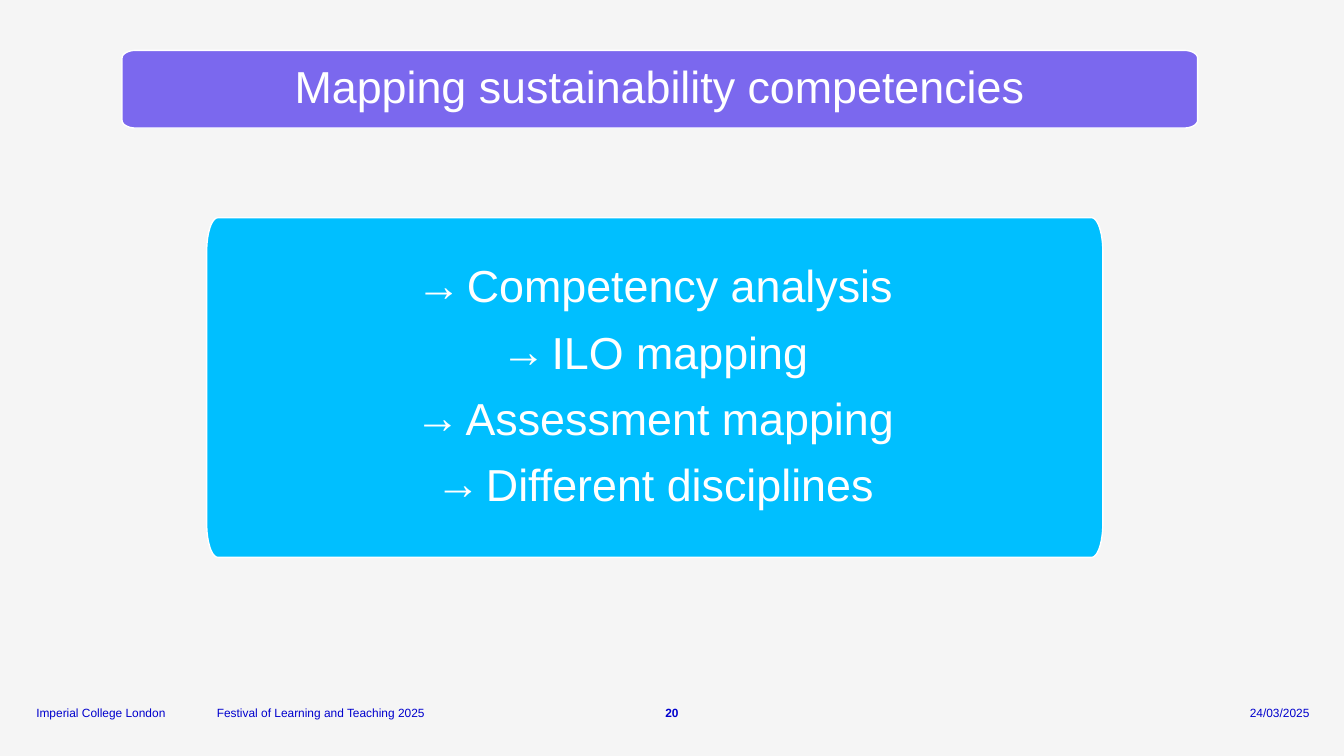
from dataclasses import dataclass
from math import cos, pi, sin

from lxml.etree import SubElement
from pptx import Presentation
from pptx.dml.color import RGBColor
from pptx.enum.text import MSO_ANCHOR as Anchor, MSO_AUTO_SIZE as AutoSize, PP_ALIGN as Align
from pptx.oxml.ns import qn
from pptx.util import Inches, Pt

WIDTH, HEIGHT = Inches(13.333), Inches(7.5)
COLUMN, ROW = WIDTH / 100, HEIGHT / 100
WHITE, FOOTER_BLUE = "FFFFFF", "0000CD"
HEADING = "Mapping sustainability competencies"
TOPICS = ["Competency analysis", "ILO mapping", "Assessment mapping", "Different disciplines"]
LARGE_FORMAT = {"alignment": Align.CENTER, "line_spacing": 0.9, "space_after": Pt(12.6)}
CORNER_STEPS = 12


@dataclass(frozen=True)
class Area:
    column: float
    row: float
    columns: float
    rows: float

    def emu(self) -> tuple[int, int, int, int]:
        return (round(self.column * COLUMN), round(self.row * ROW),
                round(self.columns * COLUMN), round(self.rows * ROW))


@dataclass(frozen=True)
class FooterItem:
    text: str
    column: float
    columns: float
    alignment: Align = Align.LEFT
    bold: bool = False


BANNER = Area(9.08, 6.67, 80.03, 10.27)
PANEL = Area(15.38, 28.8, 66.68, 44.93)
FOOTER = [
    FooterItem("Imperial College London", 2.7, 11.63),
    FooterItem("24/03/2025", 87.3, 10.13, Align.RIGHT),
    FooterItem("Festival of Learning and Teaching 2025", 16.13, 28.05),
    FooterItem("20", 48.68, 2.63, Align.CENTER, True),
]


def color(hex_value: str) -> RGBColor:
    return RGBColor.from_string(hex_value)


def apply(target, values: dict) -> None:
    for attribute, value in values.items():
        setattr(target, attribute, value)


def set_frame(frame, anchor: Anchor, margin: int) -> None:
    apply(frame, {"word_wrap": True, "auto_size": AutoSize.NONE, "vertical_anchor": anchor,
                  "margin_left": margin, "margin_right": margin,
                  "margin_top": margin, "margin_bottom": margin})


def write(paragraph, text: str, size: float, hex_value: str, layout: dict, bold: bool = False) -> None:
    apply(paragraph, layout)
    run = paragraph.add_run()
    run.text = text
    apply(run.font, {"name": "Arial", "size": Pt(size), "bold": bold})
    run.font.color.rgb = color(hex_value)


def add_arrow_bullet(paragraph) -> None:
    properties = paragraph._p.get_or_add_pPr()
    indent = Inches(0.5)
    properties.set("marL", str(indent))
    properties.set("indent", str(-indent))
    SubElement(properties, qn("a:buFont")).set("typeface", "Arial")
    SubElement(properties, qn("a:buChar")).set("char", "→")


def add_rounded_block(slide, area: Area, fill: str):
    left, top, width, height = area.emu()
    radius_x, radius_y = width / 80, height / 10
    right_x, left_x = left + width - radius_x, left + radius_x
    bottom_y, top_y = top + height - radius_y, top + radius_y
    centers = [(right_x, bottom_y), (left_x, bottom_y), (left_x, top_y), (right_x, top_y)]
    outline = []
    for quarter, (center_x, center_y) in enumerate(centers):
        for step in range(CORNER_STEPS + 1):
            angle = (quarter + step / CORNER_STEPS) * pi / 2
            outline.append((round(center_x + radius_x * cos(angle)),
                            round(center_y + radius_y * sin(angle))))
    builder = slide.shapes.build_freeform(*outline[0])
    builder.add_line_segments(outline[1:], close=True)
    block = builder.convert_to_shape()
    block.shadow.inherit = False
    block.fill.solid()
    block.fill.fore_color.rgb = color(fill)
    block.line.color.rgb = color(WHITE)
    block.line.width = Pt(1)
    return block


def add_heading(slide) -> None:
    add_rounded_block(slide, BANNER, "7B68EE")
    title = slide.shapes.title
    apply(title, dict(zip(("left", "top", "width", "height"), BANNER.emu())))
    set_frame(title.text_frame, Anchor.MIDDLE, Inches(0.17))
    write(title.text_frame.paragraphs[0], HEADING, 32, WHITE, LARGE_FORMAT)
    slide.shapes._spTree.append(title._element)


def add_topics(slide) -> None:
    frame = add_rounded_block(slide, PANEL, "00BFFF").text_frame
    set_frame(frame, Anchor.MIDDLE, Inches(0.17))
    for index, topic in enumerate(TOPICS):
        paragraph = frame.add_paragraph() if index else frame.paragraphs[0]
        add_arrow_bullet(paragraph)
        write(paragraph, topic, 32, WHITE, LARGE_FORMAT)


def add_footer(slide, item: FooterItem) -> None:
    frame = slide.shapes.add_textbox(*Area(item.column, 93.2, item.columns, 2).emu()).text_frame
    set_frame(frame, Anchor.BOTTOM, 0)
    write(frame.paragraphs[0], item.text, 8.5, FOOTER_BLUE, {"alignment": item.alignment}, item.bold)


def main() -> None:
    """Build the sustainability competencies slide."""
    deck = Presentation()
    apply(deck, {"slide_width": WIDTH, "slide_height": HEIGHT})
    slide = deck.slides.add_slide(deck.slide_layouts[5])
    slide.background.fill.solid()
    slide.background.fill.fore_color.rgb = color("F5F5F5")
    for item in FOOTER:
        add_footer(slide, item)
    add_heading(slide)
    add_topics(slide)
    deck.save("out.pptx")


if __name__ == "__main__":
    main()
